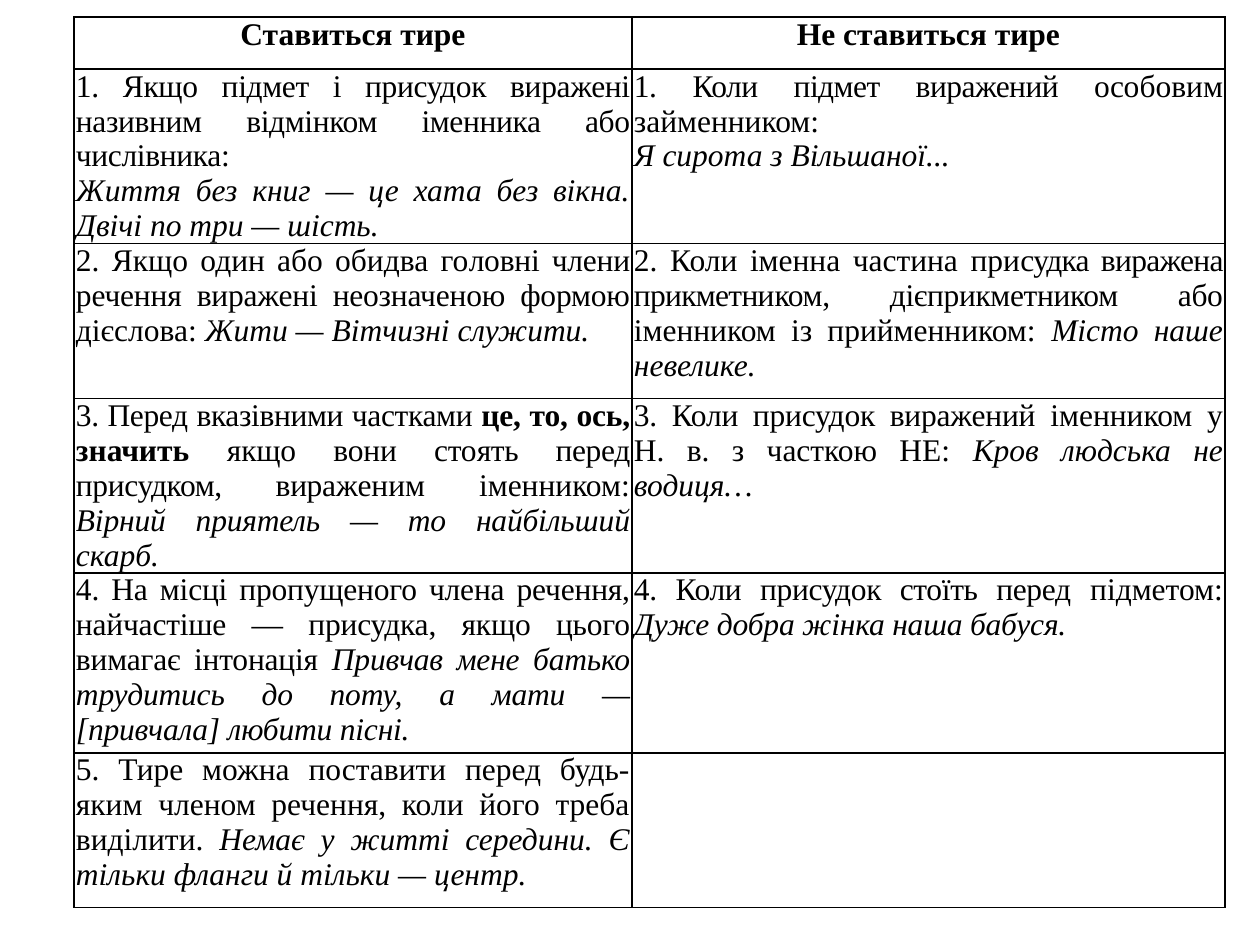
from dataclasses import dataclass

from lxml.etree import SubElement
from pptx import Presentation
from pptx.dml.color import RGBColor
from pptx.enum.text import PP_ALIGN
from pptx.oxml.ns import qn
from pptx.util import Emu, Pt

PX_PER_INCH = 126
BLACK, WHITE = "000000", "FFFFFF"
COLUMN_WIDTHS = [558, 593]
ROW_HEIGHTS = [52, 174, 155, 174, 180, 155]


@dataclass(frozen=True)
class Span:
    text: str
    spacing: int = 0  # hundredths of a point
    bold: bool = False
    italic: bool = False


def example(text: str, spacing: int = 0) -> Span:
    return Span(text, spacing, italic=True)


def heading(text: str) -> Span:
    return Span(text, bold=True)


# Each cell is a list of paragraphs, each paragraph a list of spans.
RULES = [
    (
        [[heading("Ставиться тире")]],
        [[heading("Не ставиться тире")]],
    ),
    (
        [[Span("1. Якщо підмет і присудок виражені називним відмінком "
               "іменника або числівника:", -20)],
         [example("Життя без книг — це хата без вікна. Двічі по три — шість.")]],
        [[Span("1. Коли підмет виражений осо", -30), Span("бовим займенником:")],
         [example("Я сирота з Вільшаної...")]],
    ),
    (
        [[Span("2. Якщо один або обидва го"),
          Span("ловні члени речення виражені неозначеною формою", -10),
          Span(" дієслова: "), example("Жити — Вітчизні служити.")]],
        [[Span("2. Коли іменна частина при"),
          Span("судка виражена прикметни", -40),
          Span("ком, дієприкметником або", -20),
          Span(" іменником із прийменником: "), example("Місто наше невелике.")]],
    ),
    (
        [[Span("3. Перед вказівними частками ", -20),
          Span("це, то, ось, ", -10, bold=True), Span("значить ", bold=True),
          Span("якщо вони сто", -10), Span("ять перед присудком, вира", -20),
          Span("женим іменником:"),
          example(" Вірний приятель — то найбіль", -10), example("ший скарб.")]],
        [[Span("3. Коли присудок виражений", -10),
          Span(" іменником у Н. в. з часткою НЕ: "),
          example("Кров людська не водиця…")]],
    ),
    (
        [[Span("4. На місці пропущеного члена речення, найчастіше — присудка, "
               "якщо цього вимагає інтонація ", -10),
          example("Привчав мене батько трудитись до поту, а мати — "
                  "[привчала] любити пісні.", -10)]],
        [[Span("4. Коли присудок стоїть перед", -20), Span(" підметом:"),
          example(" Дуже добра жінка наша бабуся.", -10)]],
    ),
    (
        [[Span("5. Тире можна поставити перед будь-яким членом речення, "
               "коли його треба виділити."),
          example(" Немає у житті середини. Є тільки фланги й тільки — центр.")]],
        [],
    ),
]


def px(length: int) -> Emu:
    return Emu(round(length * 914400 / PX_PER_INCH))


def color(value: str) -> RGBColor:
    return RGBColor.from_string(value)


def add_text(paragraph, text: str, *, spacing: int = 0, bold: bool = False,
             italic: bool = False, size: int = 18, ink: str = BLACK) -> None:
    run = paragraph.add_run()
    run.text = text
    run.font.name = "Times New Roman"
    run.font.size = Pt(size)
    run.font.bold = bold
    run.font.italic = italic
    run.font.color.rgb = color(ink)
    if spacing:
        run.font._element.set("spc", str(spacing))


def style_cell(cell, ink: str = BLACK, fill: str = WHITE) -> None:
    cell.margin_left = cell.margin_right = px(2)
    cell.margin_top = cell.margin_bottom = 0
    properties = cell._tc.get_or_add_tcPr()
    for side in ("a:lnL", "a:lnR", "a:lnT", "a:lnB"):
        border = SubElement(properties, qn(side), w=str(Pt(1)))
        line_fill = SubElement(border, qn("a:solidFill"))
        SubElement(line_fill, qn("a:srgbClr"), val=ink)
    cell.fill.solid()
    cell.fill.fore_color.rgb = color(fill)


def write_cell(cell, paragraphs: list[list[Span]], align: PP_ALIGN) -> None:
    frame = cell.text_frame
    for index, spans in enumerate(paragraphs):
        paragraph = frame.add_paragraph() if index else frame.paragraphs[0]
        paragraph.alignment = align
        for span in spans:
            add_text(paragraph, span.text, spacing=span.spacing,
                     bold=span.bold, italic=span.italic)


def add_rules_table(slide) -> None:
    table = slide.shapes.add_table(
        len(ROW_HEIGHTS), len(COLUMN_WIDTHS), px(74), px(17),
        px(sum(COLUMN_WIDTHS)), px(sum(ROW_HEIGHTS))).table
    table.horz_banding = False
    table.first_row = False
    for column, width in zip(table.columns, COLUMN_WIDTHS):
        column.width = px(width)
    for index, (row, height, rule) in enumerate(zip(table.rows, ROW_HEIGHTS, RULES)):
        row.height = px(height)
        align = PP_ALIGN.JUSTIFY if index else PP_ALIGN.CENTER
        for cell, paragraphs in zip(row.cells, rule):
            style_cell(cell)
            write_cell(cell, paragraphs, align)


def main() -> None:
    presentation = Presentation()
    presentation.slide_width = px(1260)
    presentation.slide_height = px(945)
    slide = presentation.slides.add_slide(presentation.slide_layouts[6])
    add_rules_table(slide)
    presentation.save("out.pptx")


if __name__ == "__main__":
    main()
